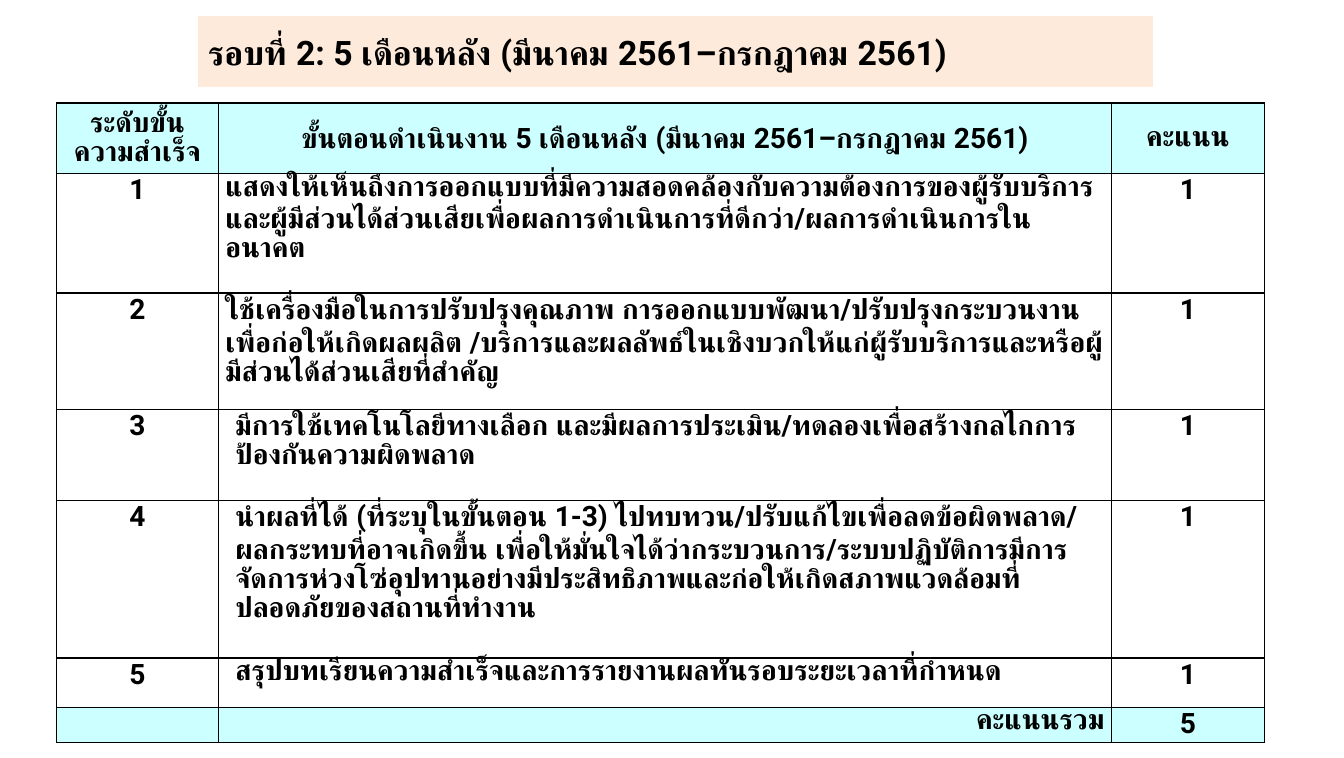
from lxml import etree
from pptx import Presentation
from pptx import util as u
from pptx.dml.color import RGBColor
from pptx.enum import lang, text
from pptx.oxml.ns import qn

FONT = "Roboto"
BLACK, AQUA, PEACH = "000000", "CCFFFF", "FDEADA"
LEFT, CENTER, RIGHT = text.PP_ALIGN.LEFT, text.PP_ALIGN.CENTER, text.PP_ALIGN.RIGHT
TOP, MIDDLE = text.MSO_ANCHOR.TOP, text.MSO_ANCHOR.MIDDLE

HEADING = "รอบที่ 2: 5 เดือนหลัง (มีนาคม 2561–กรกฎาคม 2561)"
HEADERS = ("ระดับขั้นความสำเร็จ", "ขั้นตอนดำเนินงาน 5 เดือนหลัง (มีนาคม 2561–กรกฎาคม 2561)", "คะแนน")
STEPS = [
    ("แสดงให้เห็นถึงการออกแบบที่มีความสอดคล้องกับความต้องการของผู้รับบริการและผู้มีส่วนได้ส่วนเสีย"
     "เพื่อผลการดำเนินการที่ดีกว่า/ผลการดำเนินการในอนาคต", 0),
    ("ใช้เครื่องมือในการปรับปรุงคุณภาพ การออกแบบพัฒนา/ปรับปรุงกระบวนงานเพื่อก่อให้เกิดผลผลิต "
     "/บริการและผลลัพธ์ในเชิงบวกให้แก่ผู้รับบริการและหรือผู้มีส่วนได้ส่วนเสียที่สำคัญ", 0),
    ("มีการใช้เทคโนโลยีทางเลือก และมีผลการประเมิน/ทดลองเพื่อสร้างกลไกการป้องกันความผิดพลาด", 0.1),
    ("นำผลที่ได้ (ที่ระบุในขั้นตอน 1-3) ไปทบทวน/ปรับแก้ไขเพื่อลดข้อผิดพลาด/ "
     "ผลกระทบที่อาจเกิดขึ้น เพื่อให้มั่นใจได้ว่ากระบวนการ/ระบบปฏิบัติการมีการจัดการห่วงโซ่อุปทาน"
     "อย่างมีประสิทธิภาพและก่อให้เกิดสภาพแวดล้อมที่ปลอดภัยของสถานที่ทำงาน", 0.1),
    ("สรุปบทเรียนความสำเร็จและการรายงานผลทันรอบระยะเวลาที่กำหนด", 0.1),
]
TOTAL_LABEL = "คะแนนรวม"
COLUMN_WIDTHS = (1.6, 8.84, 1.51)
ROW_HEIGHTS = (0.7, 1.18, 1.15, 0.9, 1.56, 0.49, 0.35)


def color(hex_value):
    return RGBColor.from_string(hex_value)


def apply(target, values):
    for name, value in values.items():
        setattr(target, name, value)


def write(paragraph, wording, size, align):
    paragraph.alignment = align
    run = paragraph.add_run()
    run.text = wording
    apply(run.font, {"name": FONT, "size": u.Pt(size), "bold": True,
                     "language_id": lang.MSO_LANGUAGE_ID.THAI})
    run.font.color.rgb = color(BLACK)


def add_heading(slide):
    heading = slide.shapes.title
    apply(heading, {"left": u.Inches(1.96), "top": u.Inches(0.16),
                    "width": u.Inches(9.45), "height": u.Inches(0.7)})
    heading.fill.solid()
    heading.fill.fore_color.rgb = color(PEACH)
    apply(heading.text_frame, {"vertical_anchor": MIDDLE, "word_wrap": True,
                               "auto_size": text.MSO_AUTO_SIZE.NONE})
    paragraph = heading.text_frame.paragraphs[0]
    paragraph.space_before = u.Pt(6)
    write(paragraph, HEADING, 24, LEFT)


def add_borders(cell):
    properties = cell._tc.get_or_add_tcPr()
    for side in ("lnL", "lnR", "lnT", "lnB"):
        line = etree.SubElement(properties, qn(f"a:{side}"), w=str(u.Pt(1)))
        fill = etree.SubElement(line, qn("a:solidFill"))
        etree.SubElement(fill, qn("a:srgbClr"), val=BLACK)


def fill_cell(cell, wording, align, anchor=TOP, fill=None, indent=0):
    apply(cell, {"margin_left": u.Inches(0.07), "margin_right": u.Inches(0.07),
                 "margin_top": 0, "margin_bottom": 0, "vertical_anchor": anchor})
    add_borders(cell)
    if fill:
        cell.fill.solid()
        cell.fill.fore_color.rgb = color(fill)
    else:
        cell.fill.background()
    paragraph = cell.text_frame.paragraphs[0]
    if wording:
        write(paragraph, wording, 20, align)
    if indent:
        paragraph._p.get_or_add_pPr().set("marL", str(u.Inches(indent)))


def add_score_table(slide):
    scores = slide.shapes.add_table(
        len(ROW_HEIGHTS), len(COLUMN_WIDTHS), u.Inches(0.56), u.Inches(1.02),
        u.Inches(sum(COLUMN_WIDTHS)), u.Inches(sum(ROW_HEIGHTS))).table
    apply(scores, {"first_row": False, "horz_banding": False})
    for column, width in zip(scores.columns, COLUMN_WIDTHS):
        column.width = u.Inches(width)
    for row, height in zip(scores.rows, ROW_HEIGHTS):
        row.height = u.Inches(height)

    for column, header in enumerate(HEADERS):
        fill_cell(scores.cell(0, column), header, CENTER, MIDDLE, AQUA)
    for level, (step, indent) in enumerate(STEPS, 1):
        fill_cell(scores.cell(level, 0), str(level), CENTER)
        fill_cell(scores.cell(level, 1), step, LEFT, indent=indent)
        fill_cell(scores.cell(level, 2), "1", CENTER)
    totals = (("", CENTER), (TOTAL_LABEL, RIGHT), (str(len(STEPS)), CENTER))
    for column, (wording, align) in enumerate(totals):
        fill_cell(scores.cell(len(STEPS) + 1, column), wording, align, fill=AQUA)


def main():
    deck = Presentation()
    apply(deck, {"slide_width": u.Inches(13.3), "slide_height": u.Inches(7.5)})
    slide = deck.slides.add_slide(deck.slide_layouts[5])
    add_heading(slide)
    add_score_table(slide)
    deck.save("out.pptx")


if __name__ == "__main__":
    main()
